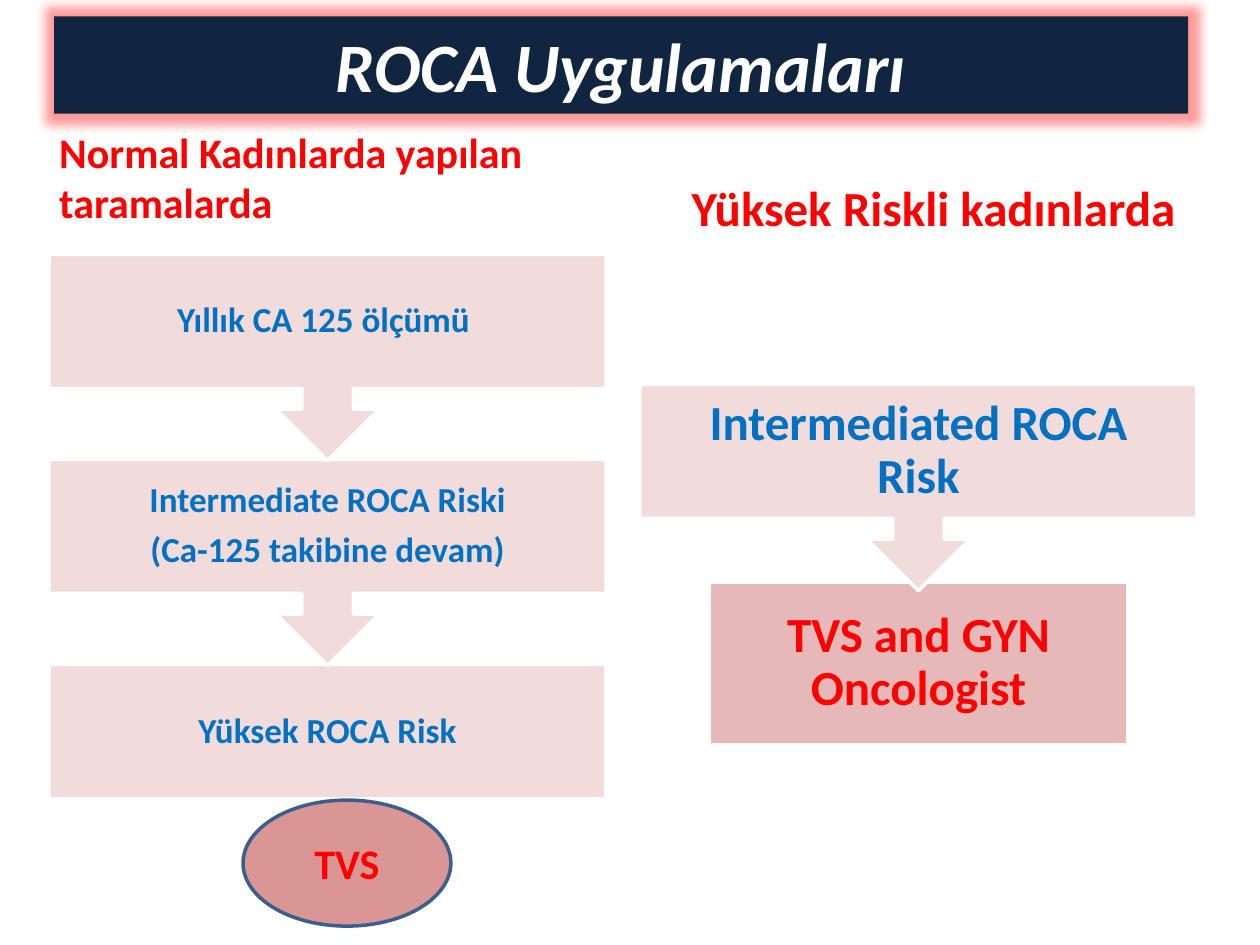
from lxml.etree import SubElement
from pptx import Presentation
from pptx.dml.color import RGBColor as RGB
from pptx.enum.shapes import MSO_SHAPE as Kind
from pptx.enum.text import MSO_ANCHOR as Anchor, MSO_AUTO_SIZE as Auto, PP_ALIGN as Align
from pptx.oxml.ns import qn
from pptx.util import Cm, Pt

HEX = {"navy": "10253F", "white": "FFFFFF", "red": "FF0000", "blue": "0070C0",
       "pale": "F2DCDB", "pink": "E6B9B8", "rose": "D99694", "edge": "3A5F8C"}

TITLE = "ROCA Uygulamaları"
HEADS = [
    (1, "Normal Kadınlarda yapılan taramalarda", 24, (0.94, 2.92, 11.23, 1.78)),
    (3, "Yüksek Riskli kadınlarda", 28, (13.69, 3.12, 11.23, 1.78)),
]
STEPS = ["Yıllık CA 125 ölçümü ",
         "Intermediate ROCA Riski\n(Ca-125 takibine devam)",
         "Yüksek ROCA Risk"]
RISK = "Intermediated ROCA Risk"
CARE = "TVS and GYN Oncologist"
SCAN = "TVS"

LEFT, RIGHT, TOP, PITCH = 0.99, 12.9, 5.13, 4.13
WIDE, BOX, CALL = 11.23, 2.72, 4.16


def color(name):
    return RGB.from_string(HEX[name])


def place(shape, spot):
    shape.left, shape.top, shape.width, shape.height = map(Cm, spot)


def write(shape, text, size, ink, align, anchor, italic=False):
    frame = shape.text_frame
    frame.text = text
    frame.word_wrap = True
    frame.auto_size = Auto.NONE
    frame.vertical_anchor = anchor
    for para in frame.paragraphs:
        para.alignment = align
        for run in para.runs:
            font = run.font
            font.name, font.size = "Calibri", Pt(size)
            font.bold, font.italic = True, italic
            font.color.rgb = color(ink)


def draw(slide, kind, spot, fill, edge, text, size, ink):
    shape = slide.shapes.add_shape(kind, *map(Cm, spot))
    shape.shadow.inherit = False
    shape.fill.solid()
    shape.fill.fore_color.rgb = color(fill)
    shape.line.color.rgb = color(edge)
    shape.line.width = Pt(2)
    write(shape, text, size, ink, Align.CENTER, Anchor.MIDDLE)
    return shape


def block(slide, kind, spot, fill, text, size, ink):
    frame = draw(slide, kind, spot, fill, "white", text, size, ink).text_frame
    pad = Cm(size * 0.02)
    frame.margin_left = frame.margin_right = pad
    frame.margin_top = frame.margin_bottom = pad
    for para in frame.paragraphs:
        para.line_spacing = 0.9
        para.space_after = Pt(size * 0.35)


def glow(shape, name, size, alpha):
    shape.shadow.inherit = False
    effects = shape._element.spPr.find(qn("a:effectLst"))
    halo = SubElement(effects, qn("a:glow"), rad=str(Pt(size)))
    tint = SubElement(halo, qn("a:srgbClr"), val=HEX[name])
    SubElement(tint, qn("a:alpha"), val=str(alpha * 1000))


def main():
    """Build the ROCA screening slide."""
    deck = Presentation()
    deck.slide_width, deck.slide_height = Cm(25.4), Cm(19.05)
    slide = deck.slides.add_slide(deck.slide_layouts[4])
    slots = {slot.placeholder_format.idx: slot for slot in slide.placeholders}

    title = slots[0]
    place(title, (1.09, 0.33, 22.86, 1.96))
    title.fill.solid()
    title.fill.fore_color.rgb = color("navy")
    glow(title, "red", 11, 40)
    write(title, TITLE, 39.6, "white", Align.CENTER, Anchor.MIDDLE, True)

    for idx, text, size, spot in HEADS:
        place(slots[idx], spot)
        write(slots[idx], text, size, "red", Align.LEFT, Anchor.BOTTOM)

    used = {0} | {head[0] for head in HEADS}
    for idx, slot in slots.items():
        if idx not in used:
            slot._element.getparent().remove(slot._element)

    last = len(STEPS) - 1
    for row in range(last, -1, -1):
        kind, tall = (Kind.RECTANGLE, BOX) if row == last else (Kind.DOWN_ARROW_CALLOUT, CALL)
        spot = (LEFT, TOP + row * PITCH, WIDE, tall)
        block(slide, kind, spot, "pale", STEPS[row], 20, "blue")

    block(slide, Kind.RECTANGLE, (14.3, 11.73, 8.43, 3.28), "pink", CARE, 28, "red")
    block(slide, Kind.DOWN_ARROW_CALLOUT, (RIGHT, 7.75, WIDE, CALL), "pale", RISK, 28, "blue")
    draw(slide, Kind.OVAL, (4.9, 16.13, 4.19, 2.54), "rose", "edge", SCAN, 24, "red")
    deck.save("out.pptx")


if __name__ == "__main__":
    main()
